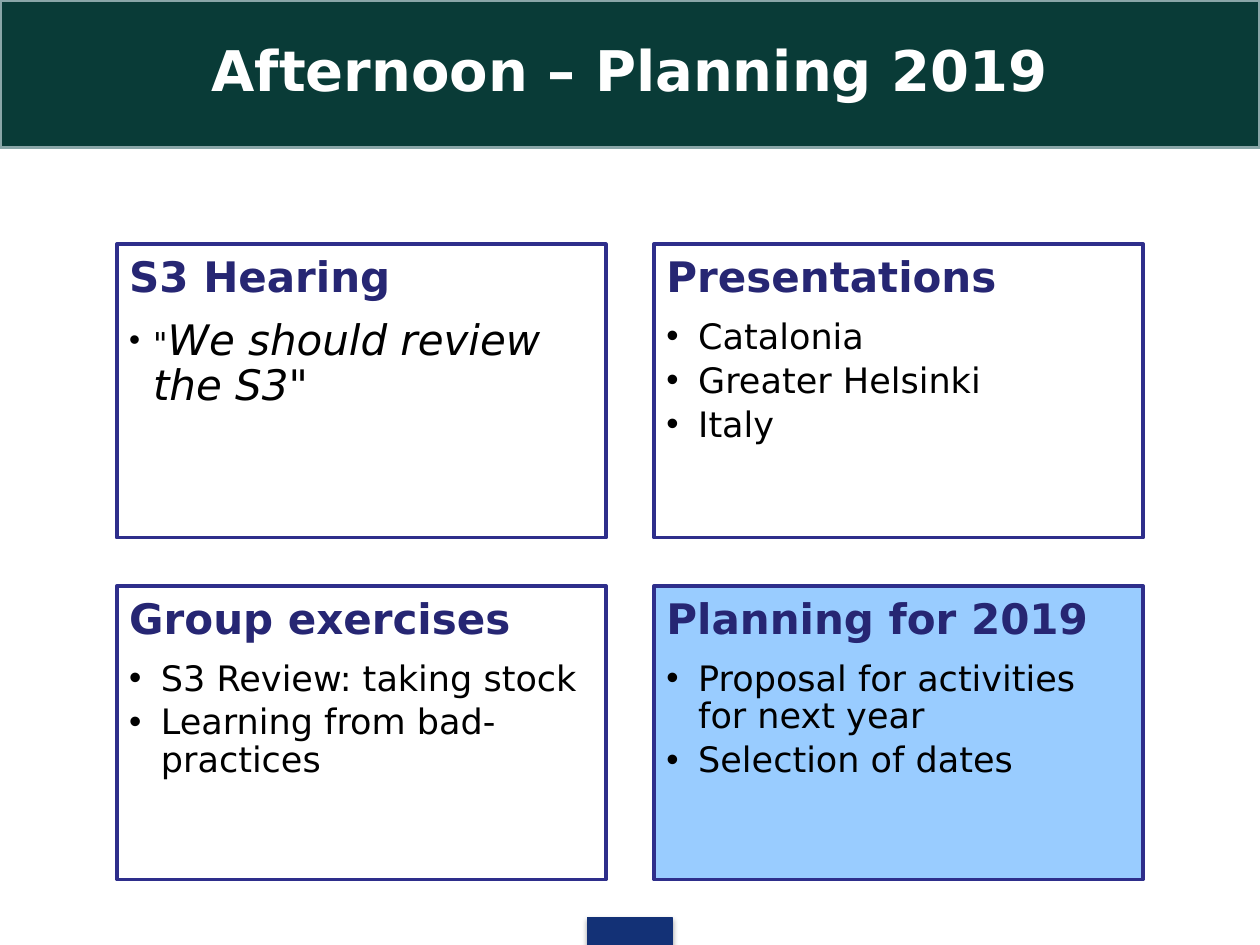
from dataclasses import dataclass

from lxml.etree import SubElement
from pptx import Presentation
from pptx.dml.color import RGBColor
from pptx.enum.shapes import MSO_SHAPE
from pptx.enum.text import MSO_ANCHOR as Anchor, MSO_AUTO_SIZE as AutoSize, PP_ALIGN as Align
from pptx.oxml.ns import qn
from pptx.util import Cm, Pt

FONT = "DejaVu Sans"
WHITE, BLACK = "FFFFFF", "000000"
HEADING, BORDER, HIGHLIGHT = "262673", "2E2E8B", "99CCFF"
BANNER, BANNER_EDGE, FOOTER = "093B37", "8AA6A8", "133176"

SLIDE_WIDTH, SLIDE_HEIGHT = 25.4, 19.05
BANNER_HEIGHT = 2.97
CARD_WIDTH, CARD_HEIGHT, CARD_GAP = 9.86, 5.92, 0.97
CARD_TOP = 4.92
CARD_LEFT = (SLIDE_WIDTH - 2 * CARD_WIDTH - CARD_GAP) / 2
CARD_INSET = 0.25
FOOTER_WIDTH, FOOTER_HEIGHT = 1.7, 0.56


@dataclass(frozen=True)
class Span:
    text: str
    size: float = 20
    italic: bool = False


@dataclass(frozen=True)
class Card:
    heading: str
    bullets: tuple[tuple[Span, ...], ...]
    fill: str = WHITE
    indent: float = 0.64


CARDS = (
    Card("S3 Hearing", ((Span('"', 18), Span('We should review the S3"', 24, True)),), indent=0.48),
    Card("Presentations", ((Span("Catalonia"),), (Span("Greater Helsinki"),), (Span("Italy"),))),
    Card("Group exercises", ((Span("S3 Review: taking stock"),), (Span("Learning from bad-practices"),))),
    Card("Planning for 2019",
         ((Span("Proposal for activities for next year"),), (Span("Selection of dates"),)), HIGHLIGHT),
)


def rgb(value: str) -> RGBColor:
    return RGBColor.from_string(value)


def place(shape, left: float, top: float, width: float, height: float) -> None:
    shape.left, shape.top = Cm(left), Cm(top)
    shape.width, shape.height = Cm(width), Cm(height)


def paint(shape, fill: str, line: str, weight: float) -> None:
    shape.fill.solid()
    shape.fill.fore_color.rgb = rgb(fill)
    shape.line.color.rgb = rgb(line)
    shape.line.width = Pt(weight)


def prepare_frame(shape, anchor: Anchor):
    frame = shape.text_frame
    frame.word_wrap = True
    frame.auto_size = AutoSize.NONE
    frame.vertical_anchor = anchor
    frame.margin_left = frame.margin_right = Cm(CARD_INSET)
    frame.margin_top = frame.margin_bottom = Cm(CARD_INSET)
    return frame


def format_paragraph(paragraph, align: Align = Align.LEFT, after: float = 0, indent: float = 0) -> None:
    properties = paragraph._p.get_or_add_pPr()
    properties.set("marL", str(Cm(indent)))
    properties.set("indent", str(-Cm(indent)))
    if indent:
        paragraph.level = 1
        SubElement(properties, qn("a:buChar"), char="•")
    else:
        SubElement(properties, qn("a:buNone"))
    paragraph.alignment = align
    paragraph.line_spacing = 0.9
    paragraph.space_before = Pt(0)
    paragraph.space_after = Pt(after)


def add_text(paragraph, text: str, *, size: float = 20, color: str = BLACK,
             bold: bool = False, italic: bool = False) -> None:
    run = paragraph.add_run()
    run.text = text
    font = run.font
    font.name, font.size = FONT, Pt(size)
    font.bold, font.italic = bold, italic
    font.color.rgb = rgb(color)


def draw_title(title) -> None:
    place(title, 0, 0, SLIDE_WIDTH, BANNER_HEIGHT)
    paint(title, BANNER, BANNER_EDGE, 2)
    paragraph = prepare_frame(title, Anchor.MIDDLE).paragraphs[0]
    format_paragraph(paragraph, Align.CENTER)
    add_text(paragraph, "Afternoon – Planning 2019", size=32, color=WHITE, bold=True)


def draw_card(shape, card: Card, row: int, column: int) -> None:
    place(shape, CARD_LEFT + column * (CARD_WIDTH + CARD_GAP),
          CARD_TOP + row * (CARD_HEIGHT + CARD_GAP), CARD_WIDTH, CARD_HEIGHT)
    paint(shape, card.fill, BORDER, 2)
    frame = prepare_frame(shape, Anchor.TOP)
    heading = frame.paragraphs[0]
    format_paragraph(heading, after=9.8)
    add_text(heading, card.heading, size=24, color=HEADING, bold=True)
    for bullet in card.bullets:
        paragraph = frame.add_paragraph()
        format_paragraph(paragraph, after=3.5, indent=card.indent)
        for span in bullet:
            add_text(paragraph, span.text, size=span.size, italic=span.italic)


def draw_footer(slide) -> None:
    footer = slide.shapes.add_shape(
        MSO_SHAPE.RECTANGLE, Cm((SLIDE_WIDTH - FOOTER_WIDTH) / 2), Cm(SLIDE_HEIGHT - FOOTER_HEIGHT),
        Cm(FOOTER_WIDTH), Cm(FOOTER_HEIGHT))
    paint(footer, FOOTER, FOOTER, 0.75)
    footer.shadow.inherit = False
    effects = footer._element.spPr.find(qn("a:effectLst"))
    shadow = SubElement(effects, qn("a:outerShdw"), blurRad=str(Pt(3.1)), dist=str(Pt(1.8)),
                        dir="5400000", rotWithShape="0")
    color = SubElement(shadow, qn("a:srgbClr"), val=BLACK)
    SubElement(color, qn("a:alpha"), val="35000")


def main() -> None:
    presentation = Presentation()
    presentation.slide_width, presentation.slide_height = Cm(SLIDE_WIDTH), Cm(SLIDE_HEIGHT)
    comparison_layout = presentation.slide_layouts[4]
    slide = presentation.slides.add_slide(comparison_layout)
    draw_footer(slide)
    draw_title(slide.shapes.title)
    for index, card in enumerate(CARDS):
        draw_card(slide.placeholders[index + 1], card, *divmod(index, 2))
    presentation.save("out.pptx")


if __name__ == "__main__":
    main()
